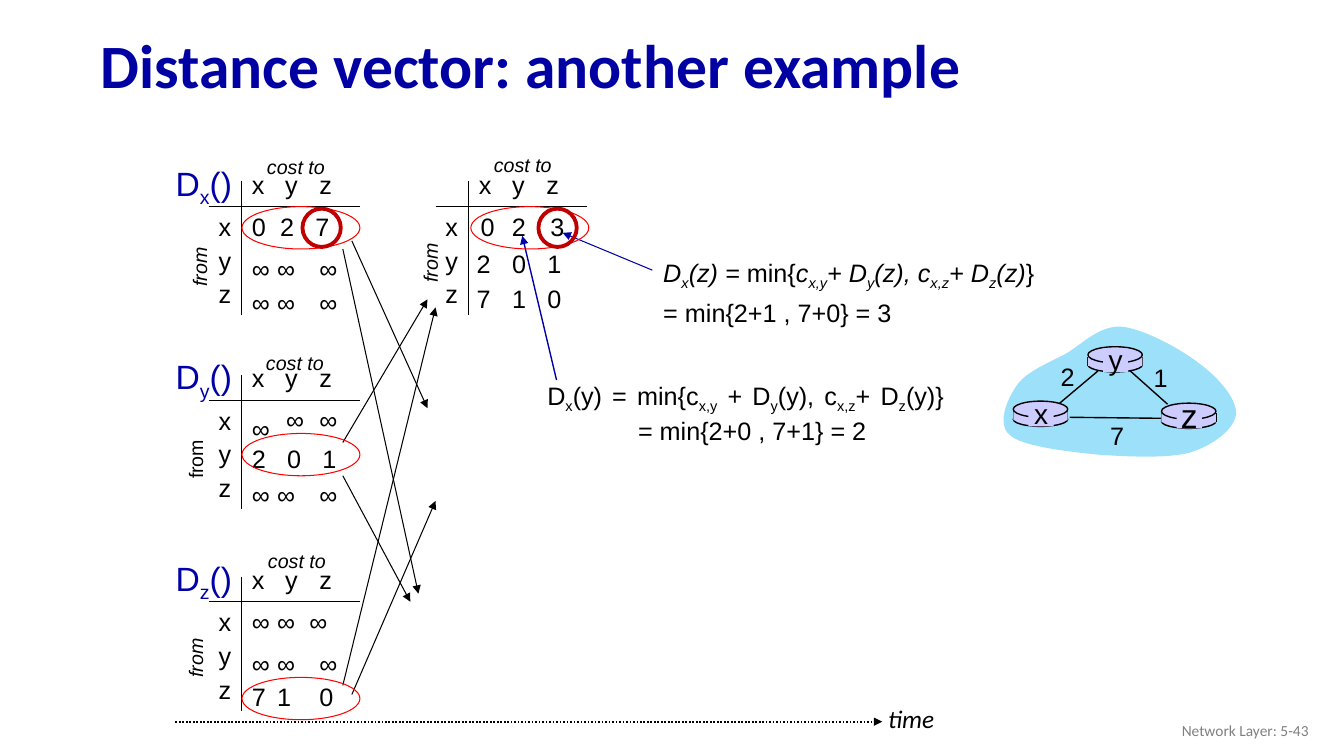
from typing import NamedTuple

from pptx import Presentation
from pptx.dml.color import RGBColor
from pptx.enum.dml import MSO_LINE as Dash
from pptx.enum.shapes import MSO_CONNECTOR as Link, MSO_SHAPE as Kind
from pptx.enum.text import MSO_ANCHOR as Anchor, PP_ALIGN as Align
from pptx.oxml.ns import qn
from pptx.util import Inches, Pt
from lxml.etree import SubElement

INK = {"black": "000000", "title": "0000A3", "blue": "0000A8", "red": "FF0000",
       "dark": "C00000", "gray": "808080", "cloud": "9CE0FA", "router": "CCCCFF"}
Point = tuple[float, float]


class Grid(NamedTuple):
    left: float
    top: float
    cost: Point
    side: Point
    node: str = ""
    slant: bool = True


class Row(NamedTuple):
    """Cells in one box, set apart by tab stops."""
    text: str
    left: float
    top: float
    stops: Point
    high: float = 0.4


class Cells(NamedTuple):
    """Cells with a box each."""
    text: str
    top: float
    lefts: tuple[float, ...] = (2.4, 2.65, 3.07)


class Arrow(NamedTuple):
    start: Point
    end: Point
    color: str = "black"
    width: float = 0.75
    dash: Dash | None = None


class Router(NamedTuple):
    name: str
    left: float
    top: float
    size: int = 20


GRIDS = [
    Grid(2.4, 1.8, (2.55, 1.49), (1.68, 2.48), "x"),
    Grid(4.65, 1.8, (4.8, 1.47), (3.97, 2.44)),
    Grid(2.4, 3.72, (2.54, 3.43), (1.64, 4.39), "y", False),
    Grid(2.4, 5.72, (2.56, 5.4), (1.64, 6.36), "z"),
]
HEAD, WIDE = (0.33, 0.67), (0.35, 0.7)
ROWS = [
    Row("0\t2\t7", 2.4, 2.05, (0.28, 0.63)),
    Row("∞\n2\t0\t1", 2.4, 4.05, WIDE, 0.7),
    Row("∞\t∞\t∞", 2.4, 5.97, (0.25, 0.57)),
    Row("2\t0\t1", 4.63, 2.41, WIDE),
    Row("7\t1\t0", 4.63, 2.76, WIDE),
]
CELLS = [
    Cells("∞∞∞", 2.46), Cells("∞∞∞", 2.8),
    Cells("∞∞", 3.96, (2.74, 3.07)), Cells("∞∞∞", 4.71),
    Cells("∞∞∞", 6.38), Cells("710", 6.71),
    Cells("023", 2.05, (4.67, 4.98, 5.36)),
]
ARROWS = [
    Arrow((3.49, 2.39), (4.24, 4.05)), Arrow((3.4, 2.47), (4.15, 5.89)),
    Arrow((3.4, 4.39), (4.24, 2.97)), Arrow((3.4, 4.72), (4.07, 5.97)),
    Arrow((3.4, 6.8), (4.32, 3.05)), Arrow((3.49, 6.89), (4.32, 4.97)),
    Arrow((1.74, 7.16), (8.75, 7.16), width=1.25, dash=Dash.ROUND_DOT),
    Arrow((5.52, 3.77), (5.18, 2.34), "blue", 1),
    Arrow((6.47, 2.68), (5.58, 2.31), "blue"),
]
RINGS = [(2.4, 2.05), (2.4, 4.3), (2.4, 6.72), (4.67, 2.05)]
MARKS = [(3, 2.07), (5.34, 2.07)]
ROUTERS = [Router("x", 10.05, 3.98), Router("z", 11.52, 4, 24), Router("y", 10.79, 3.44)]
LINKS = [((10.51, 4), (10.89, 3.68)), ((11.21, 3.68), (11.58, 4.01)),
         ((11.54, 4.15), (10.61, 4.14))]
COSTS = [("1", 11.34, 3.55), ("2", 10.42, 3.54), ("7", 10.91, 4.12)]
CLOUD = [  # start, then two handles and an end for each curve
    (10.08, 3.83), (10.17, 3.69), (10.4, 3.6), (10.57, 3.51),
    (10.74, 3.41), (10.9, 3.23), (11.12, 3.24), (11.34, 3.26), (11.71, 3.46), (11.9, 3.61),
    (12.09, 3.75), (12.27, 3.96), (12.26, 4.11), (12.24, 4.26), (12.03, 4.42), (11.8, 4.49),
    (11.57, 4.55), (11.18, 4.53), (10.89, 4.51), (10.59, 4.48), (10.15, 4.43), (10.02, 4.32),
    (9.88, 4.21), (9.99, 3.96), (10.08, 3.83),
]


def paint(name: str) -> RGBColor:
    return RGBColor.from_string(INK[name])


def write(frame, text: str, *, size=18, font="Arial", color="black", bold=False,
          slant=False, align=Align.LEFT, space=None, stops=(), anchor=Anchor.TOP, wrap=False) -> None:
    """Fill a frame; ~ toggles subscript, * toggles italic, \\v breaks a line."""
    frame.word_wrap = wrap or bool(stops)
    frame.vertical_anchor = anchor
    for num, line in enumerate(text.split("\n")):
        para = frame.add_paragraph() if num else frame.paragraphs[0]
        para.alignment, para.line_spacing = align, space
        if stops:
            tabs = SubElement(para._p.get_or_add_pPr(), qn("a:tabLst"))
            for stop in stops:
                SubElement(tabs, qn("a:tab"), pos=str(Inches(stop)), algn="l")
        for turn, part in enumerate(line.split("~")):
            for flip, bit in enumerate(part.split("*")):
                slant ^= flip > 0
                for step, piece in enumerate(bit.split("\v")):
                    if step:
                        para.add_line_break()
                    if not piece:
                        continue
                    run = para.add_run()
                    run.text = piece
                    face = run.font
                    face.size, face.name, face.bold, face.italic = Pt(size), font, bold, slant
                    face.color.rgb = paint(color)
                    if turn % 2:
                        run._r.get_or_add_rPr().set("baseline", "-25000")


def label(shapes, text: str, left: float, top: float, wide=0.38, high=0.4, turn=0, **form) -> None:
    box = shapes.add_textbox(Inches(left), Inches(top), Inches(wide), Inches(high))
    box.rotation = turn
    write(box.text_frame, text, **form)


def draw(shapes, kind: Kind, left: float, top: float, wide: float, high: float,
         fill="", line="", width=1.0) -> None:
    shape = shapes.add_shape(kind, Inches(left), Inches(top), Inches(wide), Inches(high))
    finish(shape, fill, line, width)


def finish(shape, fill="", line="", width=1.0) -> None:
    shape.shadow.inherit = False
    for side, name in ((shape.fill, fill), (shape.line.fill, line)):
        if name:
            side.solid()
            side.fore_color.rgb = paint(name)
        else:
            side.background()
    if line:
        shape.line.width = Pt(width)


def join(shapes, arrow: Arrow, head=True) -> None:
    wire = shapes.add_connector(Link.STRAIGHT, *map(Inches, arrow.start + arrow.end))
    wire.line.color.rgb = paint(arrow.color)
    wire.line.width = Pt(arrow.width)
    if arrow.dash:
        wire.line.dash_style = arrow.dash
    if head:
        SubElement(wire.line._get_or_add_ln(), qn("a:tailEnd"), type="triangle")
    SubElement(wire._element.spPr, qn("a:effectLst"))


def table(shapes, grid: Grid) -> None:
    left, top = grid.left, grid.top
    join(shapes, Arrow((left, top), (left, top + 1.33)), head=False)
    join(shapes, Arrow((left - 0.33, top + 0.25), (left + 1.17, top + 0.25)), head=False)
    label(shapes, "x\ty\tz", left, top - 0.17, 1.08, stops=HEAD)
    for num, node in enumerate("xyz"):
        label(shapes, node, left - 0.33, top + 0.25 + num / 3, 0.33)
    label(shapes, "cost to", *grid.cost, 0.9, 0.33, size=14, slant=True, wrap=True)
    label(shapes, "from", *grid.side, 0.59, 0.33, turn=270, size=14, slant=grid.slant)
    if grid.node:
        label(shapes, f"D~{grid.node}~()", left - 0.78, top - 0.21, 0.78, 0.44,
              size=24, color="blue", align=Align.RIGHT, space=0.85)


def cloud(shapes) -> None:
    dots = []
    for num in range(0, len(CLOUD) - 1, 3):
        a, b, c, d = CLOUD[num:num + 4]
        for t in (step / 12 for step in range(1, 13)):
            u = 1 - t
            dots.append(tuple(Inches(u**3 * p + 3 * u * u * t * q + 3 * u * t * t * r + t**3 * s)
                              for p, q, r, s in zip(a, b, c, d)))
    build = shapes.build_freeform(*map(Inches, CLOUD[0]))
    build.add_line_segments(dots, close=True)
    finish(build.convert_to_shape(), "cloud")


def device(shapes, item: Router) -> None:
    left, top, wide = item.left, item.top, 0.54
    draw(shapes, Kind.OVAL, left, top + 0.11, wide, 0.14, "router", "black")
    for edge in (left, left + wide):
        join(shapes, Arrow((edge, top + 0.1), (edge, top + 0.19), width=1), head=False)
    draw(shapes, Kind.RECTANGLE, left, top + 0.1, wide, 0.09, "router")
    draw(shapes, Kind.OVAL, left, top, wide, 0.16, "router", "black")
    draw(shapes, Kind.RECTANGLE, left + 0.15, top + 0.02, 0.25, 0.23, "router")
    high = 0.43 if item.size == 20 else 0.5
    label(shapes, item.name, left + 0.09, top + 0.12 - high / 2, 0.37, high,
          size=item.size, align=Align.CENTER)


def main() -> None:
    deck = Presentation()
    deck.slide_width, deck.slide_height = Inches(13.33), Inches(7.5)
    shapes = deck.slides.add_slide(deck.slide_layouts[5]).shapes
    title = shapes.title
    title.left, title.top, title.width, title.height = map(Inches, (0.9, 0.19, 11.91, 0.98))
    write(title.text_frame, "Distance vector: another example", size=44, font="Calibri",
          color="title", bold=True, space=0.9, anchor=Anchor.MIDDLE, wrap=True)
    label(shapes, "Network Layer: 5-43", 10.08, 7.05, 3, size=11, font="Calibri",
          color="gray", align=Align.RIGHT, anchor=Anchor.MIDDLE, wrap=True)
    for grid in GRIDS:
        table(shapes, grid)
    for row in ROWS:
        label(shapes, row.text, row.left, row.top, 1.08, row.high, stops=row.stops)
    for cells in CELLS:
        for text, left in zip(cells.text, cells.lefts):
            label(shapes, text, left, cells.top, 0.38 if text == "∞" else 0.34)
    for arrow in ARROWS:
        join(shapes, arrow)
    label(shapes, "time", 8.71, 6.93, 0.67, font="Calibri", slant=True)
    cloud(shapes)
    for start, end in LINKS:
        join(shapes, Arrow(start, end, width=1), head=False)
    for item in ROUTERS:
        device(shapes, item)
    for text, left, top in COSTS:
        label(shapes, text, left, top, 0.34, align=Align.CENTER)
    for left, top in RINGS:
        draw(shapes, Kind.OVAL, left, top, 1.17, 0.42, line="red", width=0.75)
    label(shapes, "D~x~(y) = min{c~x,y~ + D~y~(y), c~x,z~+ D~z~(y)}\v\t= min{2+0 , 7+1} = 2",
          5.33, 3.74, 4.13, 0.71, align=Align.JUSTIFY, stops=(0.9,), anchor=Anchor.MIDDLE)
    label(shapes, "D~x~(z) = *min{*c~x,y~+ D~y~(z), c~x,z~+ D~z~(z)*}*\n*= min{2+1 , 7+0} = 3",
          6.48, 2.47, 4, 0.79, slant=True, space=1.2, anchor=Anchor.MIDDLE, wrap=True)
    for left, top in MARKS:
        draw(shapes, Kind.OVAL, left, top, 0.38, 0.38, line="dark", width=2.75)
    deck.save("out.pptx")


if __name__ == "__main__":
    main()
